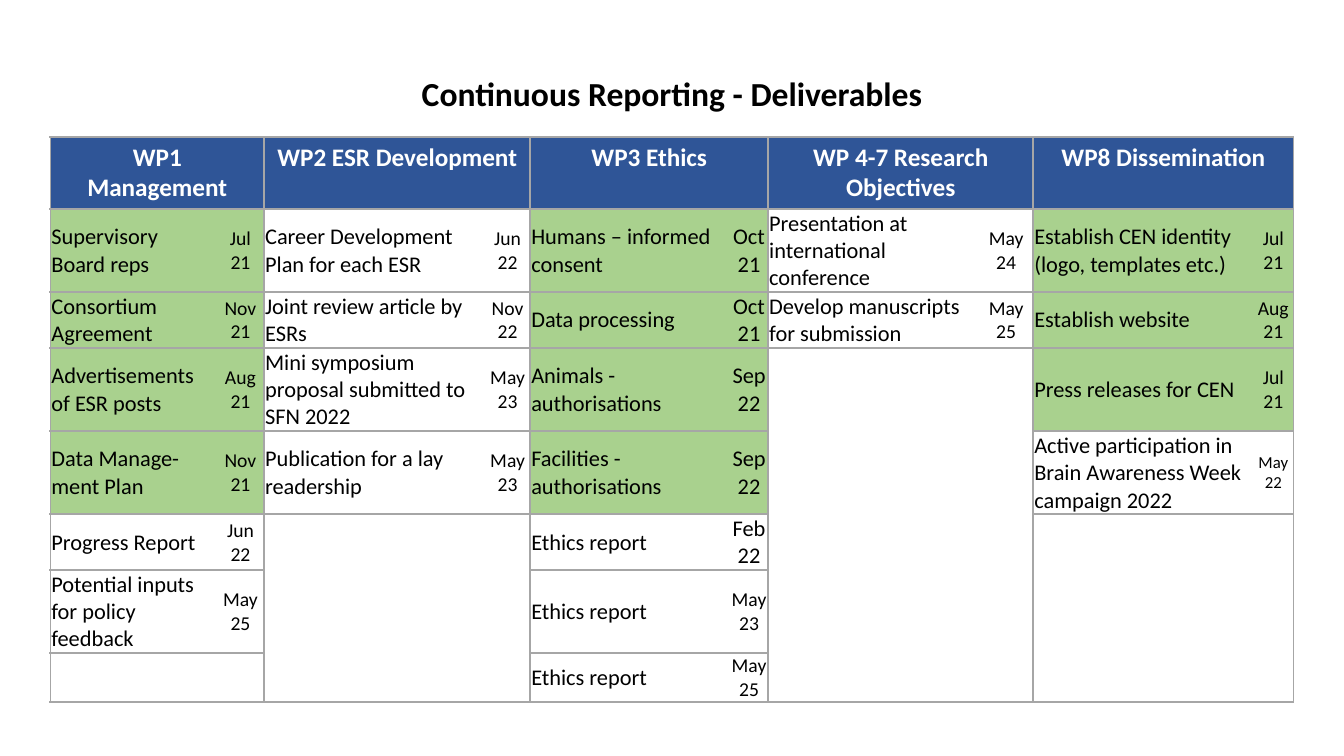
import pptx
import pptx.dml.color
import pptx.enum.text
import pptx.oxml
import pptx.oxml.ns
import pptx.util

Inches = pptx.util.Inches
Align = pptx.enum.text.PP_ALIGN
Anchor = pptx.enum.text.MSO_ANCHOR

SLIDE_WIDTH, SLIDE_HEIGHT = 13.33, 7.5
MARGIN = 0.5
TABLE_TOP, TABLE_HEIGHT = 1.36, 5.48
COLUMN_WIDTHS = [1.65, 0.47, 2.19, 0.45, 1.98, 0.38, 2.09, 0.54, 2.18, 0.4]
ROW_HEIGHTS = [0.52, 0.41, 0.41, 0.41, 0.41, 0.41, 0.5, 0.41]
BLUE, GREEN, GREY, WHITE, BLACK = "2F5597", "A9D18E", "A6A6A6", "FFFFFF", "000000"
BORDER_WIDTH = 1.5
DONE, OPEN = GREEN, None

WORK_PACKAGES = [
    ("WP1 Management", [
        ("Supervisory Board reps", "Jul 21", DONE, 14),
        ("Consortium Agreement", "Nov 21", DONE, 14),
        ("Advertisements of ESR posts", "Aug 21", DONE, 14),
        ("Data Manage-ment Plan", "Nov 21", DONE, 14),
        ("Progress Report", "Jun 22", OPEN, 14),
        ("Potential inputs for policy feedback", "May 25", OPEN, 14),
    ]),
    ("WP2 ESR Development", [
        ("Career Development Plan for each ESR", "Jun 22", OPEN, 14),
        ("Joint review article by ESRs", "Nov 22", OPEN, 14),
        ("Mini symposium proposal submitted to SFN 2022", "May 23", OPEN, 14),
        ("Publication for a lay readership", "May 23", OPEN, 14),
    ]),
    ("WP3 Ethics", [
        ("Humans – informed consent", "Oct 21", DONE, 16),
        ("Data processing", "Oct 21", DONE, 16),
        ("Animals - authorisations", "Sep 22", DONE, 16),
        ("Facilities - authorisations", "Sep 22", DONE, 16),
        ("Ethics report", "Feb 22", OPEN, 16),
        ("Ethics report", "May 23", OPEN, 14),
        ("Ethics report", "May 25", OPEN, 14),
    ]),
    ("WP 4-7 Research Objectives", [
        ("Presentation at international conference", "May 24", OPEN, 14),
        ("Develop manuscripts for submission", "May 25", OPEN, 14),
    ]),
    ("WP8 Dissemination", [
        ("Establish CEN identity (logo, templates etc.)", "Jul 21", DONE, 14),
        ("Establish website", "Aug 21", DONE, 14),
        ("Press releases for CEN", "Jul 21", DONE, 14),
        ("Active participation in Brain Awareness Week campaign 2022", "May 22", OPEN, 12),
    ]),
]


def color(hex_string):
    return pptx.dml.color.RGBColor.from_string(hex_string)


def write(text_frame, text, size=16, bold=False, fill=BLACK, align=Align.LEFT):
    text_frame.text = text
    paragraph = text_frame.paragraphs[0]
    paragraph.alignment = align
    font = paragraph.runs[0].font
    font.name = "Calibri"
    font.size = pptx.util.Pt(size)
    font.bold = bold
    font.color.rgb = color(fill)


def style_cell(cell, fill, sides="LRTB"):
    properties = cell._tc.get_or_add_tcPr()
    namespace = pptx.oxml.ns.nsdecls("a")
    width = pptx.util.Pt(BORDER_WIDTH)
    for side in "LRTB":
        paint = "<a:noFill/>"
        if side in sides:
            paint = f'<a:solidFill><a:srgbClr val="{GREY}"/></a:solidFill>'
        properties.append(pptx.oxml.parse_xml(
            f'<a:ln{side} {namespace} w="{width}">{paint}</a:ln{side}>'))
    if fill:
        cell.fill.solid()
        cell.fill.fore_color.rgb = color(fill)
    else:
        cell.fill.background()


def merge_block(table, top, bottom, left, fill):
    for row in range(top, bottom + 1):
        for column in (left, left + 1):
            style_cell(table.cell(row, column), fill)
    origin = table.cell(top, left)
    origin.merge(table.cell(bottom, left + 1))
    return origin


def fill_entry(cell, text, fill, sides, **text_format):
    cell.margin_left = cell.margin_right = cell.margin_top = Inches(0.01)
    cell.margin_bottom = 0
    cell.vertical_anchor = Anchor.MIDDLE
    style_cell(cell, fill, sides)
    write(cell.text_frame, text, **text_format)


def add_work_package(table, left, heading, deliverables):
    header = merge_block(table, 0, 0, left, BLUE)
    write(header.text_frame, heading, size=18, bold=True, fill=WHITE, align=Align.CENTER)
    for row, (task, date, status, date_size) in enumerate(deliverables, 1):
        fill_entry(table.cell(row, left), task, status, "LTB")
        fill_entry(table.cell(row, left + 1), date, status, "RTB",
                   size=date_size, align=Align.CENTER)
    last_row = len(ROW_HEIGHTS) - 1
    if len(deliverables) < last_row:
        merge_block(table, len(deliverables) + 1, last_row, left, WHITE)


def add_deliverables_table(slide):
    frame = slide.shapes.add_table(
        len(ROW_HEIGHTS), len(COLUMN_WIDTHS), Inches(MARGIN), Inches(TABLE_TOP),
        Inches(SLIDE_WIDTH - 2 * MARGIN), Inches(TABLE_HEIGHT))
    table = frame.table
    table.first_row = table.horz_banding = False
    for column, width in zip(table.columns, COLUMN_WIDTHS):
        column.width = Inches(width)
    for row, height in zip(table.rows, ROW_HEIGHTS):
        row.height = Inches(height)
    frame.height = Inches(TABLE_HEIGHT)
    for index, (heading, deliverables) in enumerate(WORK_PACKAGES):
        add_work_package(table, 2 * index, heading, deliverables)


def set_title(slide, text):
    title = slide.shapes.title
    title.left, title.width = Inches(0.28 * SLIDE_WIDTH), Inches(0.44 * SLIDE_WIDTH)
    title.top, title.height = Inches(0.09 * SLIDE_HEIGHT), Inches(0.067 * SLIDE_HEIGHT)
    title.text_frame.vertical_anchor = Anchor.MIDDLE
    write(title.text_frame, text, size=24, bold=True, align=Align.CENTER)


def main():
    presentation = pptx.Presentation()
    presentation.slide_width = Inches(SLIDE_WIDTH)
    presentation.slide_height = Inches(SLIDE_HEIGHT)
    slide = presentation.slides.add_slide(presentation.slide_layouts[5])
    set_title(slide, "Continuous Reporting - Deliverables")
    add_deliverables_table(slide)
    presentation.save("out.pptx")


if __name__ == "__main__":
    main()
